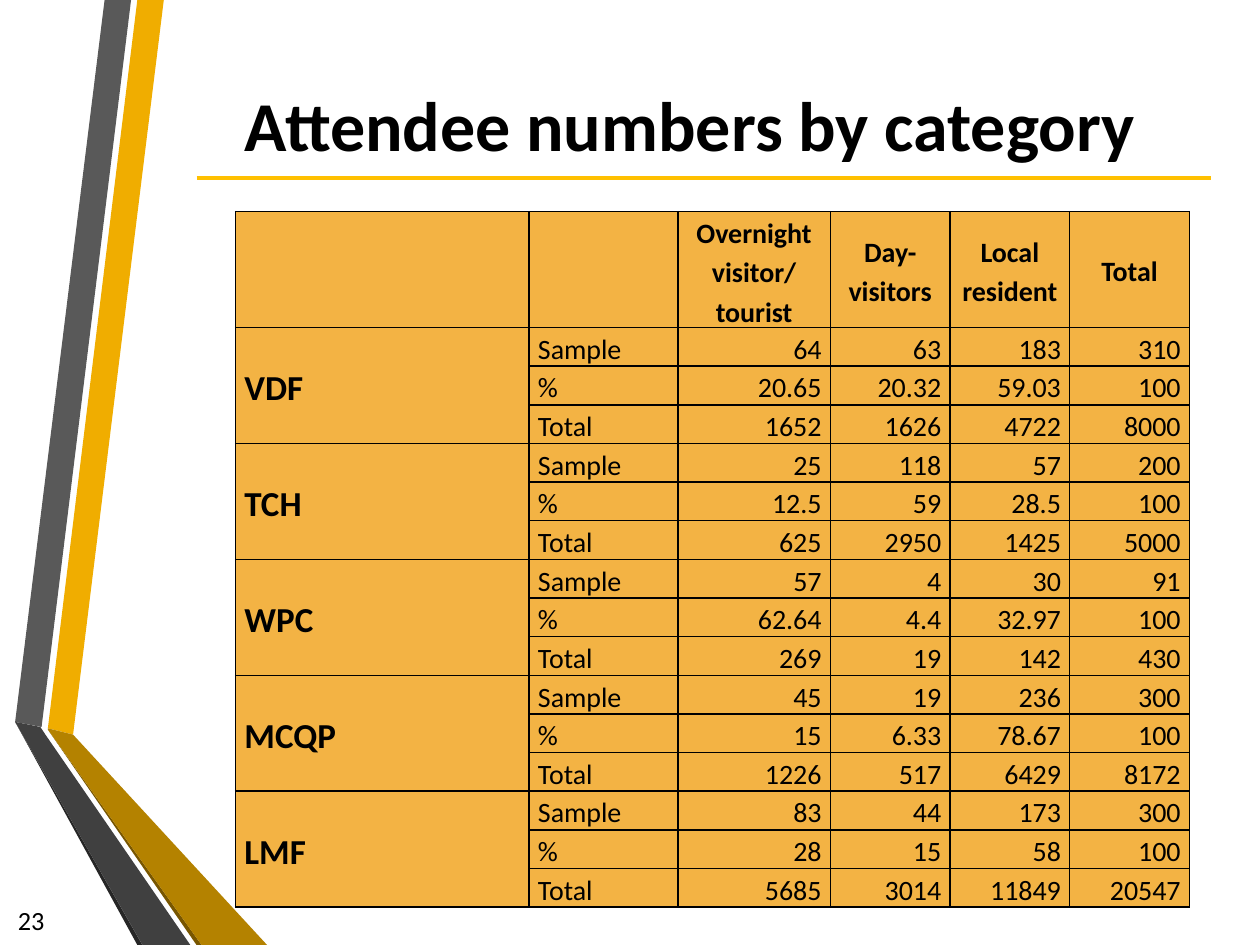
from lxml import etree
from pptx import Presentation
from pptx import util as u
from pptx.dml.color import RGBColor
from pptx.enum import shapes, text
from pptx.oxml import ns

BLACK = RGBColor(0x00, 0x00, 0x00)
GOLD = RGBColor(0xF0, 0xAD, 0x00)
DARK_GOLD = RGBColor(0xB4, 0x82, 0x00)
BROWN = RGBColor(0x78, 0x56, 0x00)
GRAY = RGBColor(0x59, 0x59, 0x59)
DARK_GRAY = RGBColor(0x40, 0x40, 0x40)
CHARCOAL = RGBColor(0x26, 0x26, 0x26)
RULE_YELLOW = RGBColor(0xFF, 0xC0, 0x00)
CELL_ORANGE = RGBColor(0xF3, 0xB3, 0x44)

LEFT = text.PP_ALIGN.LEFT
CENTER = text.PP_ALIGN.CENTER
RIGHT = text.PP_ALIGN.RIGHT
JUSTIFY = text.PP_ALIGN.JUSTIFY
MIDDLE = text.MSO_ANCHOR.MIDDLE
BOTTOM = text.MSO_ANCHOR.BOTTOM

RIBBONS = [
    (GOLD, [(0.38, 5.78), (0.58, 5.83), (1.3, 0), (1.09, 0)]),
    (GRAY, [(1.04, 0), (0.83, 0), (0.12, 5.73), (0.33, 5.77)]),
    (CHARCOAL, [(0.12, 5.73), (1.09, 7.5), (1.13, 7.5)]),
    (BROWN, [(0.38, 5.79), (1.56, 7.5), (1.6, 7.5)]),
    (DARK_GOLD, [(0.38, 5.79), (1.6, 7.5), (2.12, 7.5), (0.58, 5.83), (0.38, 5.78)]),
    (DARK_GRAY, [(1.51, 7.5), (0.36, 5.83), (0.32, 5.77), (0.12, 5.73), (1.13, 7.5)]),
]
COLUMN_WIDTHS = [2.33, 1.18, 1.21, 0.95, 0.95, 0.95]
ROW_HEIGHTS = [0.89] + [0.3] * 15
HEADERS = ["", "", "Overnight visitor/ tourist", "Day-visitors", "Local resident", "Total"]
MEASURES = ["Sample", "%", "Total"]
ATTENDEES = {
    "VDF": ["64 63 183 310", "20.65 20.32 59.03 100", "1652 1626 4722 8000"],
    "TCH": ["25 118 57 200", "12.5 59 28.5 100", "625 2950 1425 5000"],
    "WPC": ["57 4 30 91", "62.64 4.4 32.97 100", "269 19 142 430"],
    "MCQP": ["45 19 236 300", "15 6.33 78.67 100", "1226 517 6429 8172"],
    "LMF": ["83 44 173 300", "28 15 58 100", "5685 3014 11849 20547"],
}


class SlideBuilder:
    font = "Calibri"
    color = BLACK

    def __init__(self, slide):
        self.slide = slide

    def format_text(self, paragraph, size, bold, alignment):
        paragraph.alignment = alignment
        paragraph.font.size = u.Pt(size)
        for run in paragraph.runs:
            run.font.name = self.font
            run.font.size = u.Pt(size)
            run.font.bold = bold
            run.font.color.rgb = self.color

    def ribbon(self, color, points):
        vertices = [(u.Inches(x), u.Inches(y)) for x, y in points]
        builder = self.slide.shapes.build_freeform(*vertices[0])
        builder.add_line_segments(vertices[1:], close=True)
        shape = builder.convert_to_shape()
        shape.fill.solid()
        shape.fill.fore_color.rgb = color
        shape.line.fill.background()
        shape.shadow.inherit = False

    def text_box(self, words, left, top, width, height, size, bold, alignment):
        box = self.slide.shapes.add_textbox(
            u.Inches(left), u.Inches(top), u.Inches(width), u.Inches(height))
        frame = box.text_frame
        frame.word_wrap = True
        frame.vertical_anchor = MIDDLE
        frame.text = words
        self.format_text(frame.paragraphs[0], size, bold, alignment)

    def rule(self, left, right, top, color, weight):
        line = self.slide.shapes.add_connector(
            shapes.MSO_CONNECTOR.STRAIGHT,
            u.Inches(left), u.Inches(top), u.Inches(right), u.Inches(top))
        line.line.color.rgb = color
        line.line.width = u.Pt(weight)
        etree.SubElement(line._element.spPr, ns.qn("a:effectLst"))

    def table(self, left, top, widths, heights):
        frame = self.slide.shapes.add_table(
            len(heights), len(widths), u.Inches(left), u.Inches(top),
            u.Inches(sum(widths)), u.Inches(sum(heights)))
        table = frame.table
        for column, width in zip(table.columns, widths):
            column.width = u.Inches(width)
        for row, height in zip(table.rows, heights):
            row.height = u.Inches(height)
        return table

    def cell(self, cell, words, size=16, bold=False, alignment=RIGHT, anchor=BOTTOM):
        cell.text_frame.text = words
        cell.margin_left = cell.margin_right = u.Inches(0.07)
        cell.margin_top = cell.margin_bottom = 0
        cell.vertical_anchor = anchor
        paragraph = cell.text_frame.paragraphs[0]
        paragraph.line_spacing = 1.15
        paragraph.space_before = u.Pt(6)
        self.format_text(paragraph, size, bold, alignment)
        properties = cell._tc.get_or_add_tcPr()
        for side in ("a:lnL", "a:lnR", "a:lnT", "a:lnB"):
            border = etree.SubElement(properties, ns.qn(side), w=str(u.Pt(1)))
            fill = etree.SubElement(border, ns.qn("a:solidFill"))
            etree.SubElement(fill, ns.qn("a:srgbClr"), val=str(self.color))
        cell.fill.solid()
        cell.fill.fore_color.rgb = CELL_ORANGE


def fill_attendee_table(builder, table):
    for column, header in enumerate(HEADERS):
        builder.cell(table.cell(0, column), header, bold=True, alignment=CENTER, anchor=MIDDLE)
    span = len(MEASURES)
    for group, (event, lines) in enumerate(ATTENDEES.items()):
        first = 1 + group * span
        for offset, (measure, line) in enumerate(zip(MEASURES, lines)):
            row = first + offset
            builder.cell(table.cell(row, 0), "" if offset else event,
                         size=20, bold=True, alignment=LEFT, anchor=MIDDLE)
            builder.cell(table.cell(row, 1), measure, alignment=JUSTIFY)
            for column, value in enumerate(line.split(), start=2):
                builder.cell(table.cell(row, column), value)
        table.cell(first, 0).merge(table.cell(first + span - 1, 0))


def main():
    presentation = Presentation()
    presentation.slide_width = u.Inches(10)
    presentation.slide_height = u.Inches(7.5)
    builder = SlideBuilder(presentation.slides.add_slide(presentation.slide_layouts[6]))
    for color, points in RIBBONS:
        builder.ribbon(color, points)
    builder.text_box("Attendee numbers by category", 1.41, 0.47, 8.13, 1.02, 40, True, CENTER)
    table = builder.table(1.87, 1.68, COLUMN_WIDTHS, ROW_HEIGHTS)
    fill_attendee_table(builder, table)
    builder.rule(1.56, 9.61, 1.41, RULE_YELLOW, 2.25)
    builder.text_box("23", 0, 7.1, 0.45, 0.4, 15, False, RIGHT)
    presentation.save("out.pptx")


if __name__ == "__main__":
    main()
